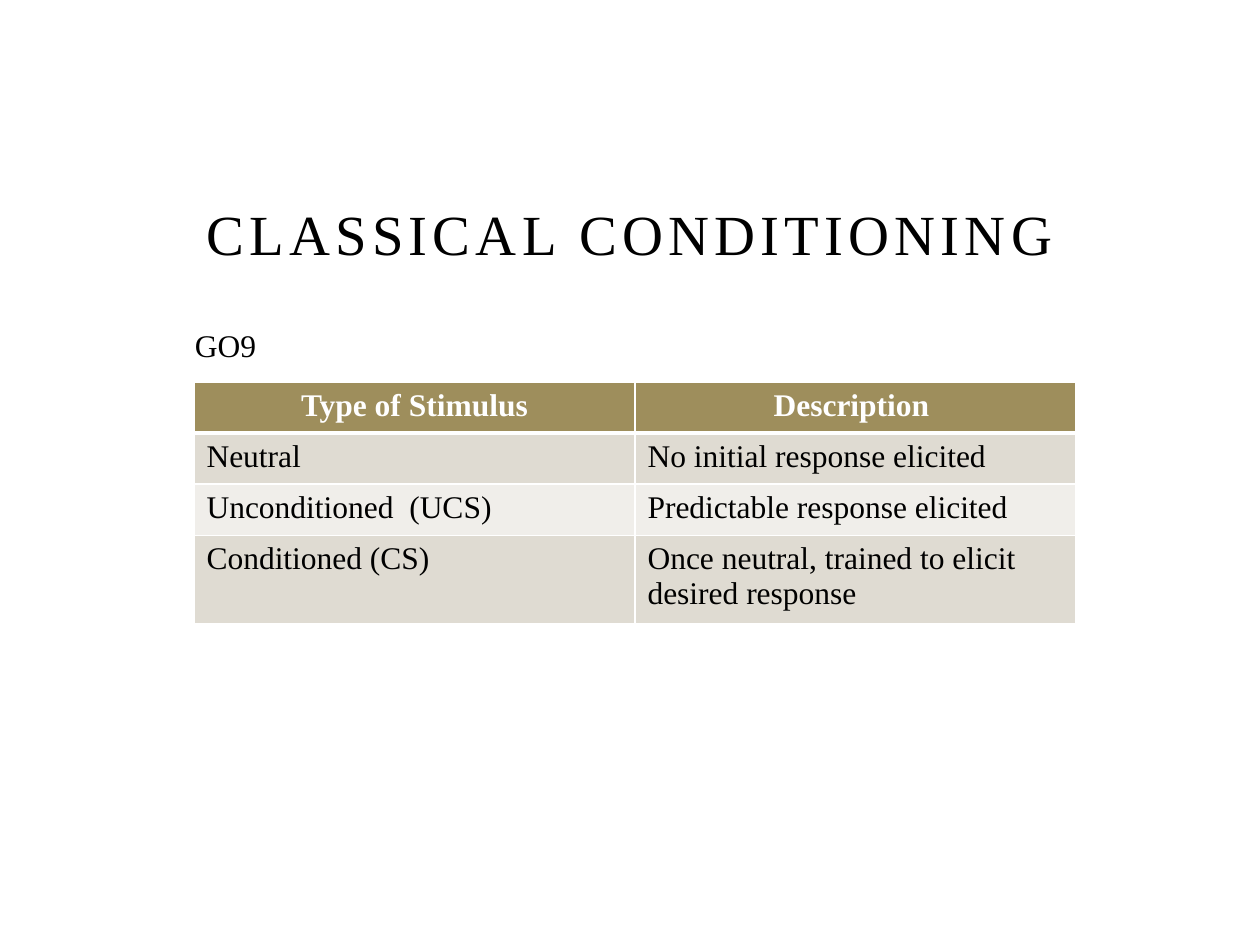
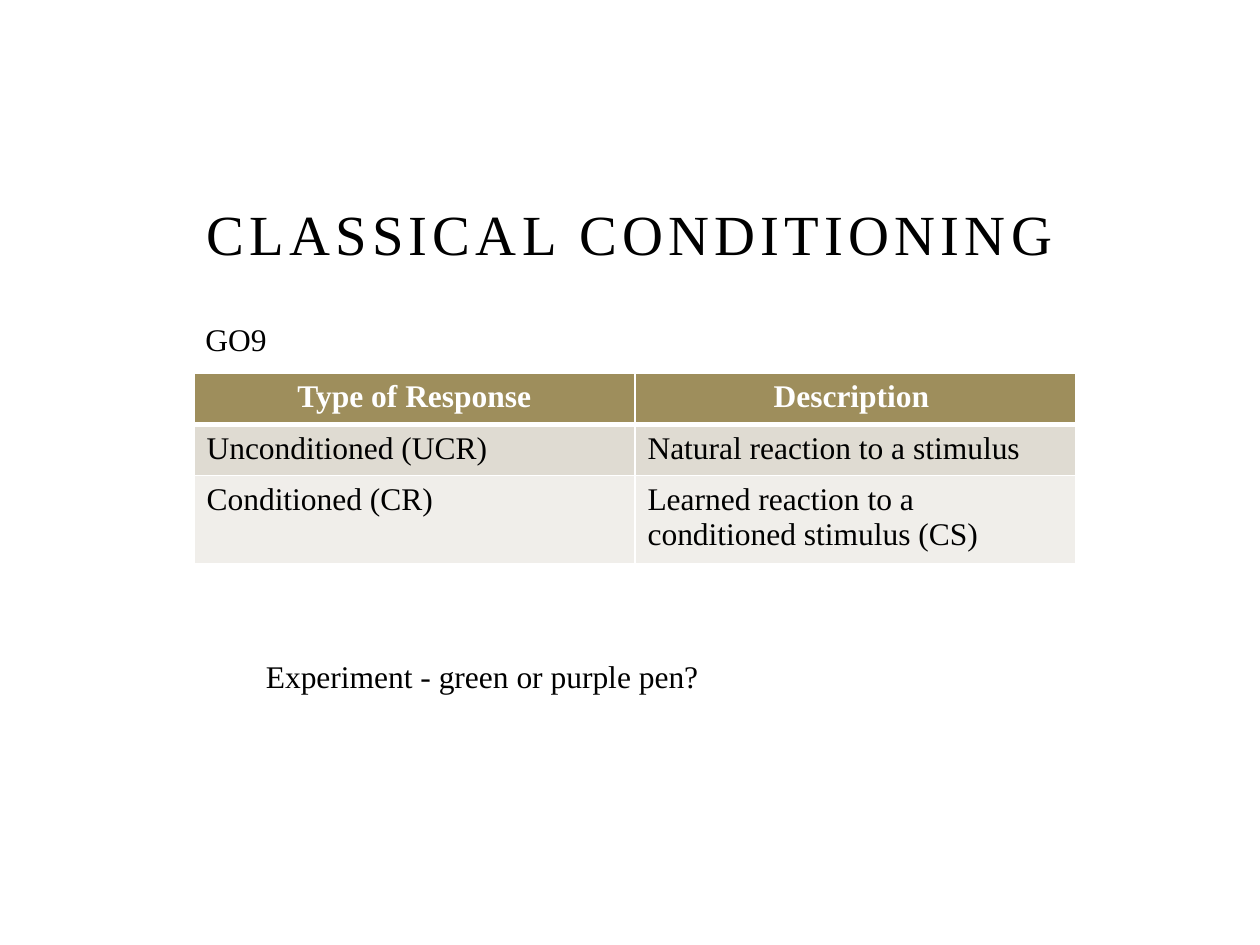
"""Build two slides on classical conditioning, each with a small table."""
from dataclasses import dataclass

from lxml.etree import SubElement as Sub
from pptx import Presentation as Deck
from pptx.dml.color import RGBColor as Rgb
from pptx.enum.text import MSO_ANCHOR as Anchor, MSO_AUTO_SIZE as Fit, PP_ALIGN as Align
from pptx.oxml.ns import qn
from pptx.util import Cm, Pt


@dataclass(frozen=True)
class Theme:
    """Hold the colours, font and type sizes."""
    font: str = "Times New Roman"
    ink: str = "000000"
    paper: str = "FFFFFF"
    head: str = "9E8E5C"
    bands: tuple = ("DFDBD2", "F0EEEA")
    title: float = 32.4
    body: float = 18
    track: int = 300
    thin: float = 1
    thick: float = 3


LOOK = Theme()


def style(part, size, tint, bold=False):
    """Format every run of a paragraph."""
    for run in part.runs:
        font = run.font
        font.name, font.size, font.bold = LOOK.font, Pt(size), bold
        font.color.rgb = Rgb.from_string(tint)


def add_text(slide, left, top, width, height, text, size=LOOK.body):
    """Add a text box and return its frame."""
    frame = slide.shapes.add_textbox(Cm(left), Cm(top), Cm(width), Cm(height)).text_frame
    frame.text = text
    style(frame.paragraphs[0], size, LOOK.ink)
    return frame


def add_title(slide, text):
    """Add the centred, widely spaced title."""
    frame = add_text(slide, 3.81, 3.61, 17.78, 1.9, text, LOOK.title)
    frame.word_wrap = True
    frame.vertical_anchor = Anchor.BOTTOM
    frame.margin_left = frame.margin_right = 0
    part = frame.paragraphs[0]
    part.alignment = Align.CENTER
    for run in part.runs:
        run.font._element.set("spc", str(LOOK.track))


def add_label(slide, left, top, width, text):
    """Add a one-line label that does not wrap."""
    frame = add_text(slide, left, top, width, 1.02, text)
    frame.word_wrap = False
    frame.auto_size = Fit.SHAPE_TO_FIT_TEXT


def add_edge(cell, side, width):
    """Draw one cell border in the paper colour."""
    line = Sub(cell._tc.get_or_add_tcPr(), qn(f"a:ln{side}"), w=str(Pt(width)))
    Sub(Sub(line, qn("a:solidFill")), qn("a:srgbClr"), val=LOOK.paper)


def fill_cell(cell, text, row):
    """Write and colour a cell as heading or banded body."""
    head = row == 0
    edges = {"L": LOOK.thin, "R": LOOK.thin,
             "T": LOOK.thick if row == 1 else LOOK.thin,
             "B": LOOK.thick if head else LOOK.thin}
    for side, width in edges.items():
        add_edge(cell, side, width)
    cell.fill.solid()
    tint = LOOK.head if head else LOOK.bands[(row - 1) % 2]
    cell.fill.fore_color.rgb = Rgb.from_string(tint)
    cell.text_frame.text = text
    part = cell.text_frame.paragraphs[0]
    part.alignment = Align.CENTER if head else Align.LEFT
    style(part, LOOK.body, LOOK.paper if head else LOOK.ink, head)


def add_grid(slide, top, rows):
    """Add a table with equal columns and rows."""
    high = Cm(1.03)
    grid = slide.shapes.add_table(len(rows), len(rows[0]), Cm(3.91), Cm(top),
                                  Cm(17.78), high * len(rows)).table
    grid.horz_banding = False
    for row, texts in enumerate(rows):
        grid.rows[row].height = high
        for col, text in enumerate(texts):
            fill_cell(grid.cell(row, col), text, row)


def add_page(deck):
    """Add a blank slide with the shared title."""
    slide = deck.slides.add_slide(deck.slide_layouts[6])
    add_title(slide, "CLASSICAL CONDITIONING")
    return slide


def main():
    """Build and save both slides."""
    deck = Deck()
    deck.slide_width, deck.slide_height = Cm(25.4), Cm(19.05)

    page = add_page(deck)
    add_grid(page, 7.7, [
        ("Type of Stimulus", "Description "),
        ("Neutral", "No initial response elicited"),
        ("Unconditioned  (UCS)", "Predictable response elicited"),
        ("Conditioned (CS)", "Once neutral, trained to elicit desired response"),
    ])
    add_label(page, 3.68, 6.45, 1.8, "GO9")

    page = add_page(deck)
    add_grid(page, 7.53, [
        ("Type of Response", "Description "),
        ("Unconditioned (UCR)", "Natural reaction to a stimulus"),
        ("Conditioned (CR)", "Learned reaction to a conditioned stimulus (CS)"),
    ])
    add_label(page, 5.11, 13.13, 9.32, "Experiment - green or purple pen?")
    add_label(page, 3.89, 6.32, 1.8, "GO9")

    deck.save("out.pptx")


if __name__ == "__main__":
    main()
